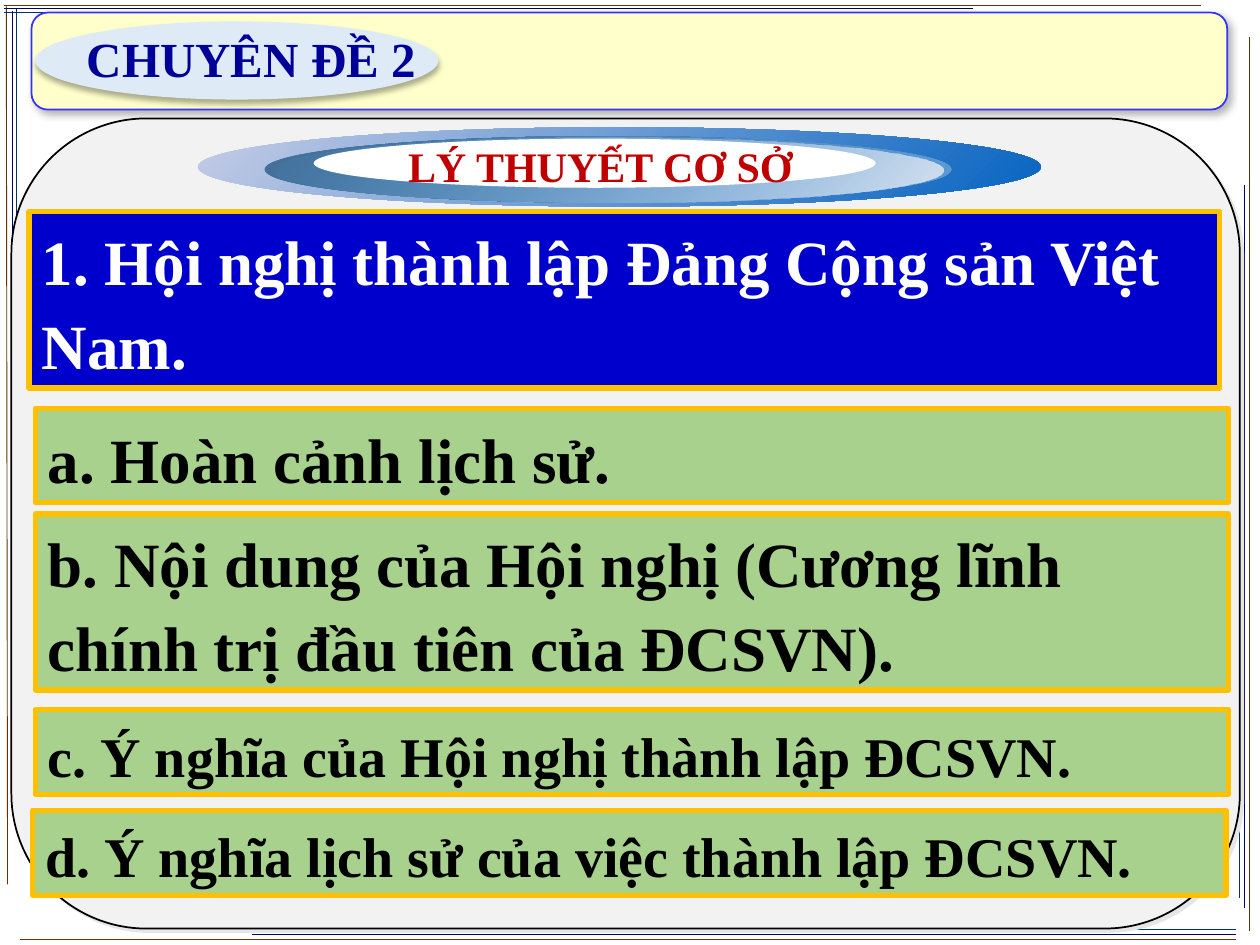
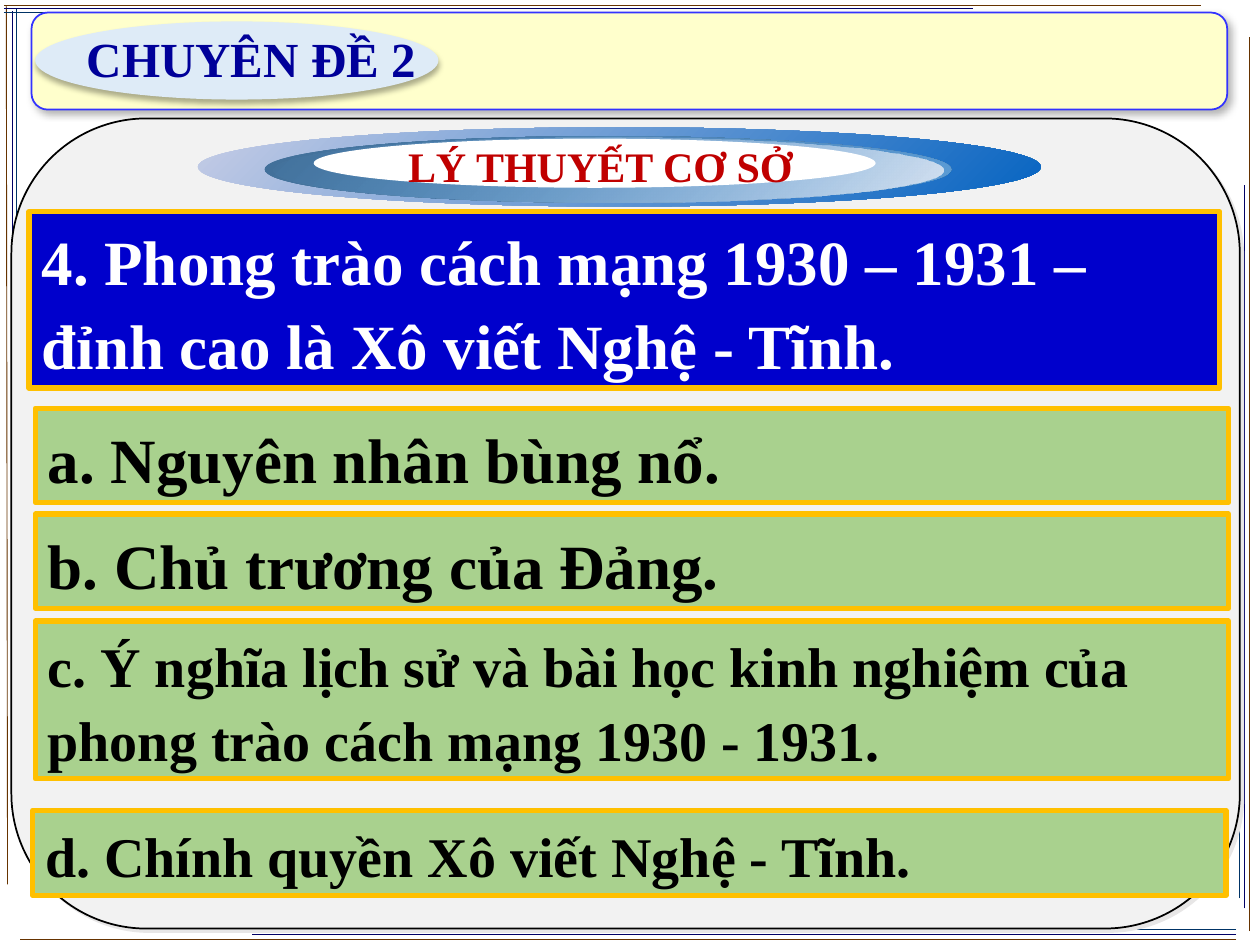
from lxml.etree import SubElement
from pptx import Presentation
from pptx.dml.color import RGBColor
from pptx.enum.shapes import MSO_CONNECTOR, MSO_SHAPE
from pptx.enum.text import MSO_ANCHOR, MSO_AUTO_SIZE, PP_ALIGN
from pptx.oxml import parse_xml
from pptx.oxml.ns import nsdecls, qn
from pptx.util import Inches, Pt

# The slide is a grid of 100 columns by 75 rows
COLS, ROWS = 100, 75
CELL = Inches(0.1)

FONT = "Times New Roman"
WHITE = RGBColor(0xFF, 0xFF, 0xFF)
BLACK = RGBColor(0, 0, 0)
BROWN = RGBColor(0x66, 0x33, 0x00)
NAVY = RGBColor(0x00, 0x00, 0x66)
TEAL = RGBColor(0x00, 0x33, 0x66)
CREAM = RGBColor(0xFF, 0xFF, 0xCC)
VIOLET = RGBColor(0x33, 0x33, 0xFF)
PALE_BLUE = RGBColor(0xDE, 0xEB, 0xF7)
TOPIC_BLUE = RGBColor(0x00, 0x00, 0x99)
PANEL_GRAY = RGBColor(0xF2, 0xF2, 0xF2)
RED = RGBColor(0xC0, 0x00, 0x00)
HEADING_BLUE = RGBColor(0x00, 0x00, 0xCC)
GREEN = RGBColor(0xA9, 0xD1, 0x8E)
GOLD = RGBColor(0xFF, 0xC0, 0x00)

# Ends of the brown, navy and teal line on each edge: x1, y1, x2, y2
FRAME = [
    [(0.5, 0.4, 0.6, 70.2), (1, 0.9, 1, 32.5), (1.3, 0.7, 1.3, 17.4)],
    [(0.3, 0.4, 95.3, 0.4), (0.3, 0.7, 77.2, 0.7), (0.3, 1, 41, 1)],
    [(99.2, 73.9, 99.2, 2.9), (98.8, 72.1, 98.8, 14.7), (98.4, 71.3, 98.4, 40.9)],
    [(98.1, 74.6, 1.6, 74.6), (98.1, 74.2, 20, 74.2), (98.1, 73.8, 56.8, 73.8)],
]

# Shape, place, fill or gradient ends, line, shadow (colour, alpha, blur, distance, angle)
BANNER = [
    (MSO_SHAPE.ROUNDED_RECTANGLE, (2.5, 1, 94.9, 7.7), CREAM, VIOLET, ("000000", 30, 4.5, 2.6, 53)),
    (MSO_SHAPE.OVAL, (2.8, 1.7, 32, 6.2), PALE_BLUE, None, ("000000", 32, 3.5, 2.2, 90)),
    (MSO_SHAPE.ROUNDED_RECTANGLE, (0.9, 9.4, 97.5, 64.3), PANEL_GRAY, BLACK, ("E7E6E6", 100, 0, 2.8, 45)),
    (MSO_SHAPE.OVAL, (15.7, 10.1, 66.9, 6.3), ("C6CDE6", "0563C1"), None, None),
    (MSO_SHAPE.OVAL, (21, 10.8, 54.5, 5.3), ("416F98", "5B9BD5"), None, None),
    (MSO_SHAPE.OVAL, (21.7, 10.9, 53.2, 5.2), ("5B9BD5", "D8E3F1"), None, None),
    (MSO_SHAPE.OVAL, (24.9, 11, 44.6, 3.9), WHITE, None, None),
]
CLEAR_START = 5  # the gradient of this banner shape fades in from transparent

LABELS = [
    ("CHUYÊN ĐỀ 2", (5.9, 1.8, 28.8, 5.7), 28, TOPIC_BLUE, PP_ALIGN.LEFT),
    ("LÝ THUYẾT CƠ SỞ", (14.6, 10.7, 66.1, 5), 24, RED, PP_ALIGN.CENTER),
]

# Heading, then items as text, left, top, number of lines, size
SLIDES = [
    ("1. Hội nghị thành lập Đảng Cộng sản Việt Nam.", [
        ("a. Hoàn cảnh lịch sử.", 2.8, 32.4, 1, 36),
        ("b. Nội dung của Hội nghị (Cương lĩnh chính trị đầu tiên của ĐCSVN).", 2.8, 40.8, 2, 36),
        ("c. Ý nghĩa của Hội nghị thành lập ĐCSVN.", 2.8, 56.3, 1, 32),
        ("d. Ý nghĩa lịch sử của việc thành lập ĐCSVN.", 2.6, 64.3, 1, 32),
    ]),
    ("4. Phong trào cách mạng 1930 – 1931 – đỉnh cao là Xô viết Nghệ - Tĩnh.", [
        ("a. Nguyên nhân bùng nổ.", 2.8, 32.4, 1, 36),
        ("b. Chủ trương của Đảng.", 2.8, 40.8, 1, 36),
        ("c. Ý nghĩa lịch sử và bài học kinh nghiệm của phong trào cách mạng 1930 - 1931.",
         2.8, 49.3, 2, 32),
        ("d. Chính quyền Xô viết Nghệ - Tĩnh.", 2.6, 64.3, 1, 32),
    ]),
]


def cells(place):
    return [round(v * CELL) for v in place]


def write(sp, text, size, color, align=PP_ALIGN.LEFT, anchor=MSO_ANCHOR.TOP, spacing=None):
    tf = sp.text_frame
    tf.text = text
    p = tf.paragraphs[0]
    frame_format = {"word_wrap": True, "auto_size": MSO_AUTO_SIZE.NONE, "vertical_anchor": anchor}
    para_format = {"alignment": align, "line_spacing": spacing}
    font_format = {"name": FONT, "size": Pt(size), "bold": True}
    r = p.runs[0]
    for obj, values in ((tf, frame_format), (p, para_format), (r.font, font_format)):
        for name, value in values.items():
            setattr(obj, name, value)
    r.font.color.rgb = color


prs = Presentation()
prs.slide_width, prs.slide_height = COLS * CELL, ROWS * CELL
layout = prs.slide_layouts[5]

for number, (heading, items) in enumerate(SLIDES):
    slide = prs.slides.add_slide(layout)
    shapes = slide.shapes

    # Frame lines go to the layout once and serve every slide
    if number == 0:
        for edge in FRAME:
            for ends, color in zip(edge, (BROWN, NAVY, TEAL)):
                line = shapes.add_connector(MSO_CONNECTOR.STRAIGHT, *cells(ends))
                line.line.color.rgb = color
                line.line.width = Pt(0.5)
                SubElement(line.element.spPr, qn("a:effectLst"))
                layout.shapes.element.append(line.element)

    for i, (kind, place, fill, outline, shadow) in enumerate(BANNER):
        sp = shapes.add_shape(kind, *cells(place))
        sp.shadow.inherit = False
        if isinstance(fill, RGBColor):
            sp.fill.solid()
            sp.fill.fore_color.rgb = fill
        else:
            sp.fill.gradient()
            sp.fill.gradient_angle = 315
            for stop, color, position in zip(sp.fill.gradient_stops, fill, (0, 1)):
                stop.color.rgb = RGBColor.from_string(color)
                stop.position = position
            if i == CLEAR_START:
                start = sp.element.spPr.find(".//" + qn("a:srgbClr"))
                SubElement(start, qn("a:alpha"), val="0")
        if outline is None:
            sp.line.fill.background()
        else:
            sp.line.color.rgb = outline
            sp.line.width = Pt(1)
        if shadow:
            color, alpha, blur, distance, angle = shadow
            sp.element.spPr.find(qn("a:effectLst")).append(parse_xml(
                f'<a:outerShdw {nsdecls("a")} blurRad="{Pt(blur)}" dist="{Pt(distance)}" '
                f'dir="{angle * 60000}" algn="ctr" rotWithShape="0"><a:srgbClr val="{color}">'
                f'<a:alpha val="{alpha * 1000}"/></a:srgbClr></a:outerShdw>'))

    for text, place, size, color, align in LABELS:
        write(shapes.add_textbox(*cells(place)), text, size, color, align)

    # The heading and items share one style; the title moves in front of the panel
    title = shapes.title
    title.element.getparent().append(title.element)
    rows = [(title, heading, (2.3, 16.8, 94.5, 14), 36, WHITE, HEADING_BLUE)]
    for text, left, top, lines, size in items:
        place = (left, top, 94.7, 1 + lines * size * 0.18)
        sp = shapes.add_shape(MSO_SHAPE.RECTANGLE, *cells(place))
        sp.shadow.inherit = False
        rows.append((sp, text, place, size, BLACK, GREEN))
    for sp, text, place, size, color, fill in rows:
        sp.left, sp.top, sp.width, sp.height = cells(place)
        sp.fill.solid()
        sp.fill.fore_color.rgb = fill
        sp.line.color.rgb = GOLD
        sp.line.width = Pt(3)
        write(sp, text, size, color, anchor=MSO_ANCHOR.BOTTOM, spacing=1.1)

prs.save("out.pptx")
